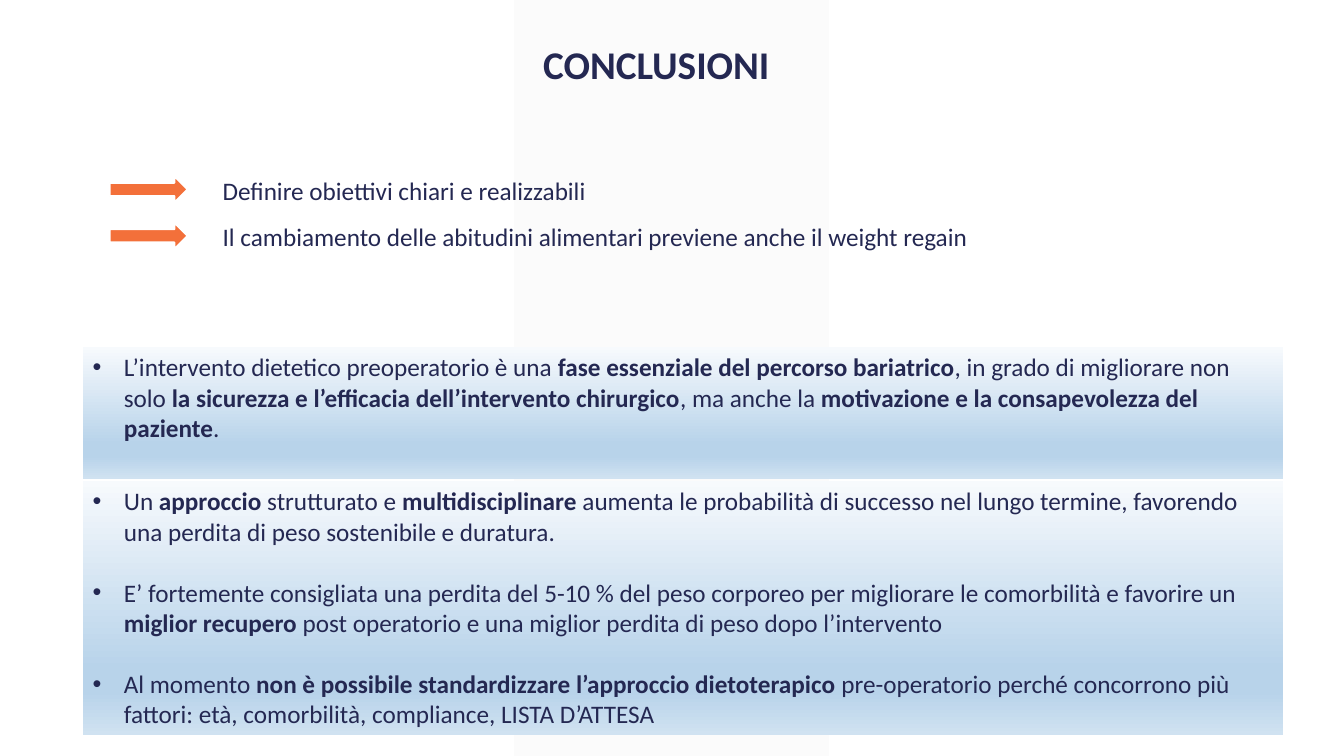
from dataclasses import dataclass

from lxml import etree
from pptx import Presentation
from pptx.dml.color import RGBColor
from pptx.enum.shapes import MSO_SHAPE
from pptx.enum.text import MSO_ANCHOR, PP_ALIGN
from pptx.oxml import parse_xml
from pptx.oxml.ns import nsdecls, qn
from pptx.util import Inches, Pt

RECTANGLE, ARROW = MSO_SHAPE.RECTANGLE, MSO_SHAPE.RIGHT_ARROW
LEFT, CENTER, TOP = PP_ALIGN.LEFT, PP_ALIGN.CENTER, MSO_ANCHOR.TOP

# Content: each paragraph is a list of spans, bold ones at odd positions
TITLE = "CONCLUSIONI"
GOALS = [  # text, box width, box height
    ("Definire obiettivi chiari e realizzabili", 4.67, 0.4),
    ("Il cambiamento delle abitudini alimentari previene anche il weight regain", 7.68, 0.71),
]
PANELS = [  # top, height, paragraphs
    (3.44, 1.31, [
        ["L’intervento dietetico preoperatorio è una ",
         "fase essenziale del percorso bariatrico",
         ", in grado di migliorare non solo ",
         "la sicurezza e l’efficacia dell’intervento chirurgico",
         ", ma anche la ",
         "motivazione e la consapevolezza del paziente",
         "."],
    ]),
    (4.77, 2.52, [
        ["Un ", "approccio", " strutturato e ", "multidisciplinare",
         " aumenta le probabilità di successo nel lungo termine, favorendo una perdita "
         "di peso sostenibile e duratura."],
        ["E’ fortemente consigliata una perdita del 5-10 % del peso corporeo per migliorare "
         "le comorbilità e favorire un ",
         "miglior recupero ",
         "post operatorio e una miglior perdita di peso dopo l’intervento"],
        ["Al momento ",
         "non è possibile standardizzare l’approccio dietoterapico ",
         "pre-operatorio perché concorrono più fattori: età, comorbilità, compliance, "
         "LISTA D’ATTESA"],
    ]),
]


@dataclass(frozen=True)
class Theme:
    font: str = "Calibri"
    title_size: int = 28
    body_size: int = 18
    ink: str = "242852"
    arrow: str = "F3703A"
    white: str = "FFFFFF"
    band: str = "F2F2F2"
    band_opacity: int = 30
    gradient: tuple = ((0, "F7FAFD"), (74, "B8D3EA"), (83, "B8D3EA"), (100, "D0E2F1"))


THEME = Theme()

# Layout in inches
WIDTH, HEIGHT = 13.33, 7.5
BAND = (5.1, 0, 3.12, HEIGHT)
TITLE_BOX = (3.78, 0.35, 5.46, 0.57)
GOAL_PITCH = 0.46
GOAL_LEFT, GOAL_TOP = 2.11, 1.69
ARROW_LEFT, ARROW_TOP, ARROW_WIDTH, ARROW_HEIGHT = 1.09, 1.75, 0.77, 0.26
PANEL_LEFT, PANEL_WIDTH = 0.82, 11.91
BULLET_INDENT = 0.31
PARAGRAPH_GAP = 22


def add_block(page, kind, area, color):
    shape = page.shapes.add_shape(kind, *map(Inches, area))
    shape.shadow.inherit = False
    shape.fill.solid()
    shape.fill.fore_color.rgb = RGBColor.from_string(color)
    shape.line.fill.background()
    return shape


def write_spans(para, spans, size=THEME.body_size, first_bold=False):
    for index, text in enumerate(spans):
        span = para.add_run()
        span.text = text
        values = {"name": THEME.font, "size": Pt(size), "bold": first_bold or index % 2 == 1}
        for name, value in values.items():
            setattr(span.font, name, value)
        span.font.color.rgb = RGBColor.from_string(THEME.ink)


def add_label(page, area, text, align=LEFT, **style):
    frame = page.shapes.add_textbox(*map(Inches, area)).text_frame
    frame.word_wrap = True
    para = frame.paragraphs[0]
    para.alignment = align
    write_spans(para, [text], **style)


def set_gradient(shape):
    stops = "".join(
        f'<a:gs pos="{share * 1000}"><a:srgbClr val="{color}"/></a:gs>'
        for share, color in THEME.gradient)
    gradient = parse_xml(
        f'<a:gradFill {nsdecls("a")} rotWithShape="1"><a:gsLst>{stops}</a:gsLst>'
        '<a:lin ang="5400000" scaled="0"/></a:gradFill>')
    properties = shape.fill._xPr
    properties.replace(properties.find(qn("a:solidFill")), gradient)


def set_bullet(para):
    properties = para._p.get_or_add_pPr()
    indent = Inches(BULLET_INDENT)
    properties.set("marL", str(indent))
    properties.set("indent", str(-indent))
    etree.SubElement(properties, qn("a:buFont")).set("typeface", "Arial")
    etree.SubElement(properties, qn("a:buChar")).set("char", "•")


def add_panel(page, top, height, paragraphs):
    panel = add_block(page, RECTANGLE, (PANEL_LEFT, top, PANEL_WIDTH, height), THEME.white)
    set_gradient(panel)
    frame = panel.text_frame
    frame.word_wrap = True
    frame.vertical_anchor = TOP
    for index, spans in enumerate(paragraphs):
        para = frame.add_paragraph() if index else frame.paragraphs[0]
        para.alignment = LEFT
        para.space_before = Pt(PARAGRAPH_GAP if index else 0)
        set_bullet(para)
        write_spans(para, spans)


def main():
    deck = Presentation()
    deck.slide_width, deck.slide_height = Inches(WIDTH), Inches(HEIGHT)
    page = deck.slides.add_slide(deck.slide_layouts[6])

    # Pale vertical band
    band = add_block(page, RECTANGLE, BAND, THEME.band)
    color = band.fill._xPr.find(qn("a:solidFill"))[0]
    etree.SubElement(color, qn("a:alpha")).set("val", str(THEME.band_opacity * 1000))

    # Title
    add_label(page, TITLE_BOX, TITLE, CENTER, size=THEME.title_size, first_bold=True)

    # Goals, each led by an arrow
    for row, (text, width, height) in enumerate(GOALS):
        shift = row * GOAL_PITCH
        arrow = add_block(
            page, ARROW, (ARROW_LEFT, ARROW_TOP + shift, ARROW_WIDTH, ARROW_HEIGHT), THEME.arrow)
        arrow.line.color.rgb = RGBColor.from_string(THEME.white)
        arrow.line.width = Pt(1.25)
        add_label(page, (GOAL_LEFT, GOAL_TOP + shift, width, height), text)

    # Gradient panels
    for panel in PANELS:
        add_panel(page, *panel)

    deck.save("out.pptx")


if __name__ == "__main__":
    main()
